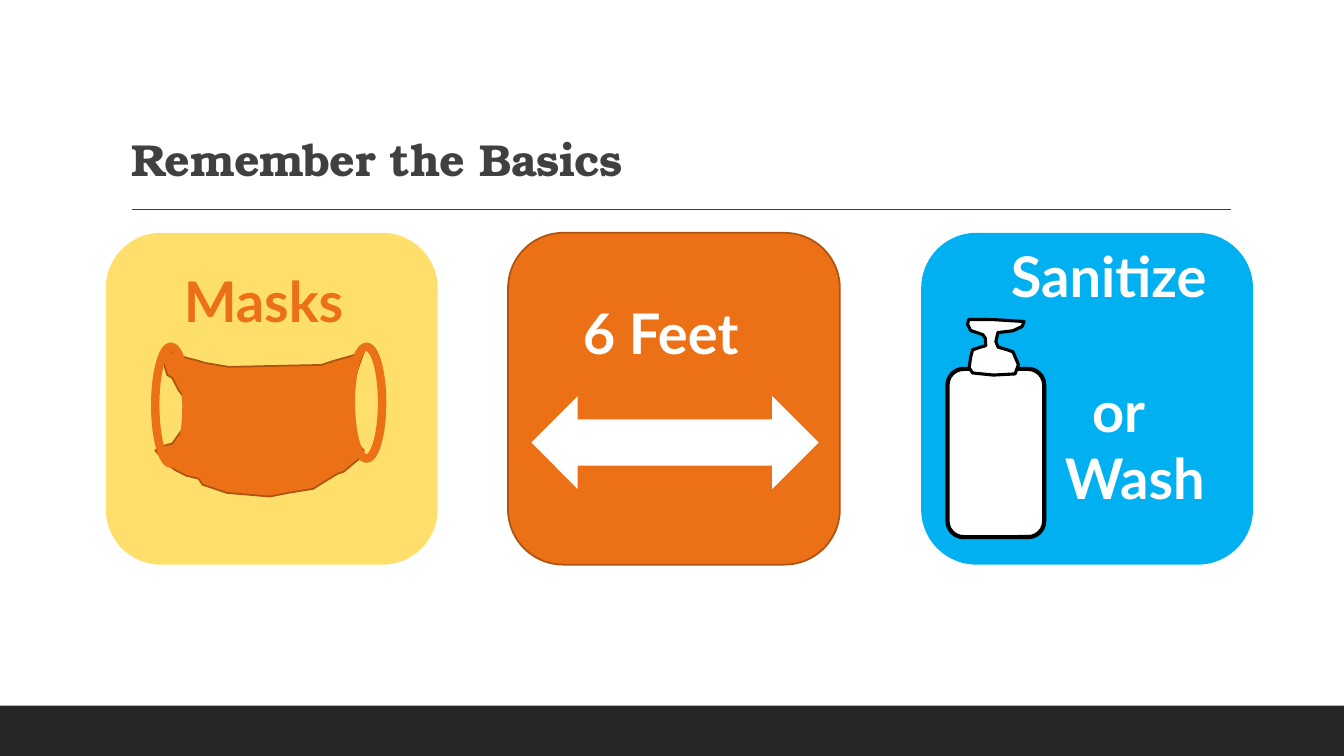
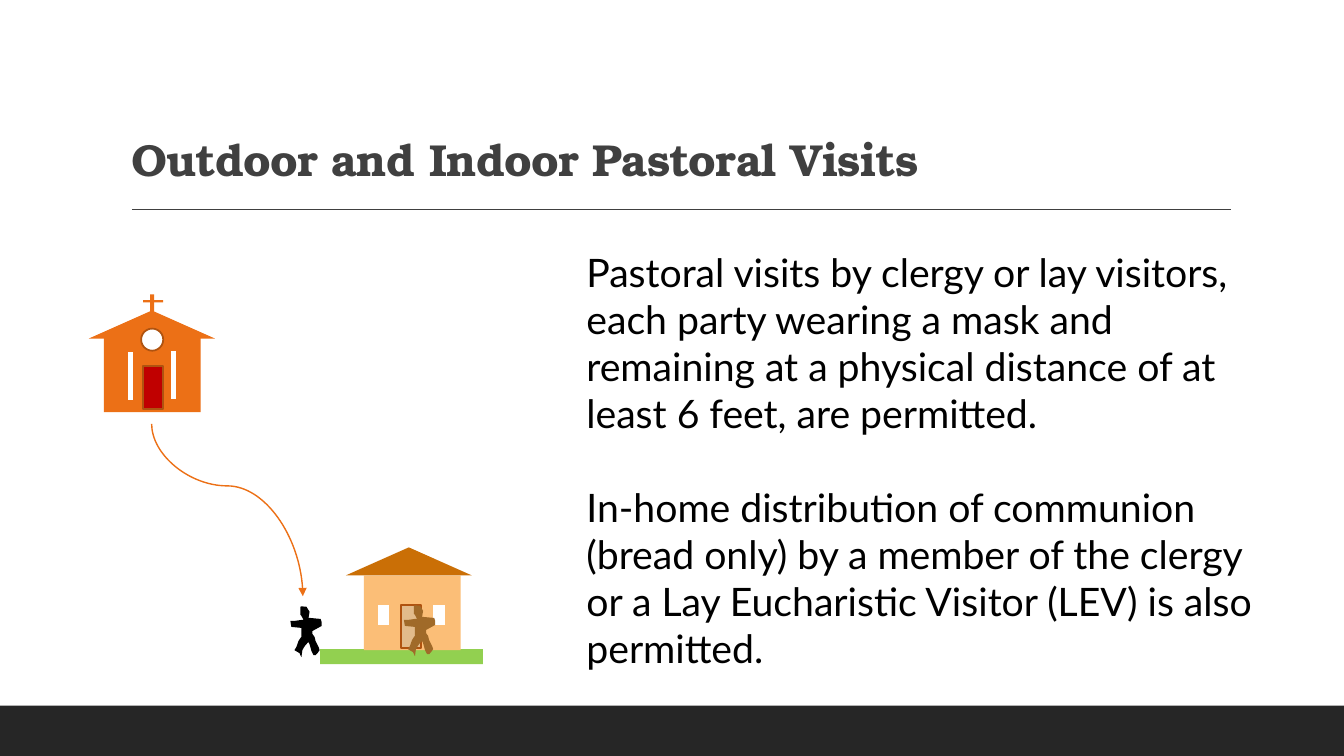
from lxml import etree
from pptx import Presentation
from pptx.dml.color import RGBColor
from pptx.enum.shapes import MSO_CONNECTOR as Link, MSO_SHAPE as Geo
from pptx.enum.text import MSO_ANCHOR as Anchor, MSO_AUTO_SIZE as Fit, PP_ALIGN as Align
from pptx.oxml.ns import qn
from pptx.util import Pt

# Shared colours and fonts
ORANGE, RUST, WHITE, BLACK = "EC7016", "AF5310", "FFFFFF", "000000"
GREY, DARK = "404040", "262626"
HEAD, BODY = "TeX Gyre Bonum", "Lato"

# Slide 1: cards, symbols and labels
TITLES = ["Remember the Basics", "Outdoor and Indoor Pastoral Visits"]
SIDE, TOP = 237, 166.3
CARDS = [(75.6, "FFDF6B", None), (362.9, ORANGE, RUST), (658, "00B0F0", None)]
ARROW = (379.5, 283, 205.2, 66.2)
BOTTLE = (676.8, 263.5, 69.1, 120.2)
LOOPS = [(110.9, 247.7, 22.3, 83.5), (250.6, 247.7, 22.3, 79.9)]
LABELS = [((95.8, 186.5, 185, 55), "Masks", ORANGE),
          ((379.4, 209.5, 185, 55), "6 Feet", WHITE)]
WASH_BOX = (715, 169.2, 154, 201)
WASH = [("Sanitize", 0, 0), ("or", 58, 48), ("Wash", 38.5, 0)]  # indent, gap

MASK = [
    (7.2, 0.7), (13.7, 5), (22.3, 7.9), (31, 10.1), (35.3, 11.5), (52.6, 14.4),
    (118.8, 13), (127.4, 10.1), (140.4, 6.5), (149, 3.6), (144.7, 15.8),
    (141.8, 25.2), (139, 36), (138.5, 54), (143.3, 67.7), (149, 74.2),
    (147.6, 78.5), (134.6, 89.3), (130.3, 90.7), (117.4, 98.6), (113, 101.5),
    (95, 104.4), (82, 107), (51.1, 104.4), (42.5, 101.5), (33.8, 98.6),
    (31, 94.3), (22.3, 92.2), (13.7, 87.8), (10.1, 85), (0, 74.2), (4.3, 71.3),
    (12.2, 69.1), (20.9, 56.9), (20.9, 46), (19.4, 34.6), (16.6, 31),
    (12.2, 22.3), (8.6, 20.2), (5.8, 11)]
PUMP = [
    (4.3, 38.9), (1.8, 35.3), (2.9, 27.4), (4.3, 22.3), (8.6, 20.9),
    (13.7, 19.4), (13.3, 14), (11.5, 11.5), (2.9, 8.6), (0.7, 4.3), (1.4, 0.7),
    (19, 0.8), (41, 2.2), (39.6, 5.8), (33, 8.8), (22.3, 10.1), (20.9, 16.6),
    (22.5, 20.5), (28.8, 22.3), (33.1, 23.8), (37, 33), (34.6, 39.6), (19, 40.4)]

# Slide 2: text and scene
VISITS = [
    "Pastoral visits by clergy or lay visitors, each party wearing a mask and "
    "remaining at a physical distance of at least 6 feet, are permitted.",
    "In-home distribution of communion (bread only) by a member of the clergy "
    "or a Lay Eucharistic Visitor (LEV) is also permitted."]
CHURCH = [
    (Geo.RECTANGLE, (74.2, 241.2, 69.1, 53.3), ORANGE),
    (Geo.ISOSCELES_TRIANGLE, (63.5, 221.8, 90, 20), ORANGE),
    (Geo.RECTANGLE, (107.3, 210.2, 2.9, 13.7), ORANGE),
    (Geo.RECTANGLE, (102.2, 214.4, 14.4, 1.6), ORANGE)]
LAWN = (Geo.RECTANGLE, (228.7, 463.7, 116.2, 10.8), "92D050")
FRONT = [
    (Geo.FLOWCHART_PROCESS, (102.2, 261.4, 14.4, 31), "C00000", RUST),
    (Geo.FLOWCHART_PROCESS, (91.4, 251.3, 3.6, 34.6), WHITE),
    (Geo.FLOWCHART_PROCESS, (122.4, 250.6, 3.6, 34.6), WHITE),
    (Geo.OVAL, (100.8, 234.7, 15.8, 15.8), WHITE, RUST)]
HOUSE = [
    (Geo.RECTANGLE, (259.9, 411.1, 69.1, 53.3), "FBBE77"),
    (Geo.ISOSCELES_TRIANGLE, (247, 391, 90, 20), "CA6F06"),
    (Geo.FLOWCHART_PROCESS, (309.6, 432, 7.9, 14.4), WHITE),
    (Geo.FLOWCHART_PROCESS, (270, 432, 7.9, 14.4), WHITE),
    (Geo.FLOWCHART_PROCESS, (286.6, 432, 14.4, 31), "E2BB8B", RUST)]
PERSON = [
    (13.7, 4.3), (11.5, 0.7), (7.9, 0.4), (7.2, 0.7), (7.2, 6.5), (7.9, 7.2),
    (9.4, 10.1), (7.9, 10.1), (2.9, 10.8), (0, 10.8), (0.7, 15.1), (7.9, 15.8),
    (7.9, 22.3), (7.2, 23), (5.8, 25.2), (4.3, 29.5), (2.9, 31.7), (6.5, 33.8),
    (7.2, 35.3), (7.9, 36.7), (8.6, 31.7), (9.4, 30.2), (10.8, 28.1),
    (12.2, 26.6), (13, 25.9), (13.7, 27.4), (15.1, 32.4), (15.8, 33.8),
    (16.6, 35.3), (18, 35.3), (19.4, 33.8), (20.9, 31.7), (20.2, 29.5),
    (18.7, 26.6), (18, 25.2), (17.3, 22.3), (15.8, 20.2), (15.8, 18),
    (22.3, 14.4), (22.3, 11.5), (21.6, 9.4), (13, 8.6)]


def rgb(code):
    return RGBColor.from_string(code)


def pts(nums):
    return [Pt(n) for n in nums]


def paint(shape, fill, line=None, width=1.25):
    shape.shadow.inherit = False
    if fill:
        shape.fill.solid()
        shape.fill.fore_color.rgb = rgb(fill)
    else:
        shape.fill.background()
    if line:
        shape.line.color.rgb = rgb(line)
        shape.line.width = Pt(width)
    else:
        shape.line.fill.background()
    return shape


def draw(slide, kind, box, fill, line=None, width=1.25):
    return paint(slide.shapes.add_shape(kind, *pts(box)), fill, line, width)


def trace(slide, dots, spot, fill, line=None, width=1.25):
    first, *rest = [pts(dot) for dot in dots]
    pen = slide.shapes.build_freeform(*first, scale=1.0)
    pen.add_line_segments(rest, close=True)
    return paint(pen.convert_to_shape(*pts(spot)), fill, line, width)


def join(slide, kind, ends, color):
    link = slide.shapes.add_connector(kind, *pts(ends))
    link.line.color.rgb = rgb(color)
    link.line.width = Pt(1)
    etree.SubElement(link.element.spPr, qn("a:effectLst"))
    return link


def style(para, size, color, bold=False, face=BODY):
    font = para.font
    font.name, font.size, font.bold = face, Pt(size), bold
    font.color.rgb = rgb(color)


def write(slide, box, rows, size, color, bold=False, align=Align.LEFT):
    """Each row is text, left indent, gap above."""
    frame = slide.shapes.add_textbox(*pts(box)).text_frame
    frame.word_wrap = True
    for i, (text, indent, gap) in enumerate(rows):
        para = frame.add_paragraph() if i else frame.paragraphs[0]
        para.text, para.alignment, para.space_before = text, align, Pt(gap)
        para._p.get_or_add_pPr().set("marL", str(Pt(indent)))
        style(para, size, color, bold)


def start(deck, text):
    slide = deck.slides.add_slide(deck.slide_layouts[5])
    title = slide.shapes.title
    title.left, title.top, title.width, title.height = pts((86.4, 22.3, 792, 114.5))
    frame = title.text_frame
    frame.text = text
    frame.vertical_anchor, frame.auto_size = Anchor.BOTTOM, Fit.NONE
    para = frame.paragraphs[0]
    para.alignment, para.line_spacing = Align.LEFT, 0.9
    style(para, 32, GREY, True, HEAD)
    para.runs[0]._r.get_or_add_rPr().set("spc", "-50")
    return slide


def dress(deck, slide):
    """Move the shared band and rule to the slide master."""
    band = draw(slide, Geo.RECTANGLE, (0, 504, 960, 36), DARK)
    rule = join(slide, Link.STRAIGHT, (94.3, 149.5, 879.1, 149.5), GREY)
    for part in (band, rule):
        deck.slide_master.shapes.element.append(part.element)


def basics(slide):
    for left, fill, line in CARDS:
        draw(slide, Geo.ROUNDED_RECTANGLE, (left, TOP, SIDE, SIDE), fill, line)
    draw(slide, Geo.LEFT_RIGHT_ARROW, ARROW, WHITE)
    trace(slide, MASK, (110.9, 247.7), ORANGE, RUST)
    for box, text, color in LABELS:
        write(slide, box, [(text, 0, 0)], 40, color, True, Align.CENTER)
    draw(slide, Geo.ROUNDED_RECTANGLE, BOTTLE, WHITE, BLACK, 3)
    trace(slide, PUMP, (690.5, 227.5), WHITE, BLACK, 2.25)
    write(slide, WASH_BOX, WASH, 40, WHITE, True)
    for box in LOOPS:
        draw(slide, Geo.OVAL, box, None, ORANGE, 6)


def visits(slide):
    rows = [(text, 0, 33.6 * i) for i, text in enumerate(VISITS)]
    write(slide, (411.8, 173.5, 510.5, 312.5), rows, 28, BLACK)
    for part in CHURCH + [LAWN]:
        draw(slide, *part)
    trace(slide, PERSON, (207.4, 432.7), BLACK)
    for part in FRONT + HOUSE:
        draw(slide, *part)
    # Curved arrow, a quarter turn to the left
    route = join(slide, Link.CURVE, (223.9, 310.3, 100.8, 418.3), ORANGE)
    props = route.element.spPr
    props.find(qn("a:xfrm")).set("rot", "16200000")
    bend = props.find(qn("a:prstGeom")).get_or_add_avLst()
    etree.SubElement(bend, qn("a:gd"), name="adj1", fmla="val 36000")
    etree.SubElement(props.find(qn("a:ln")), qn("a:tailEnd"), type="triangle")
    trace(slide, PERSON, (288.5, 432), "A06A29")


def main():
    deck = Presentation()
    deck.slide_width, deck.slide_height = Pt(960), Pt(540)
    first, second = [start(deck, text) for text in TITLES]
    dress(deck, first)
    basics(first)
    visits(second)
    deck.save("out.pptx")


if __name__ == "__main__":
    main()
